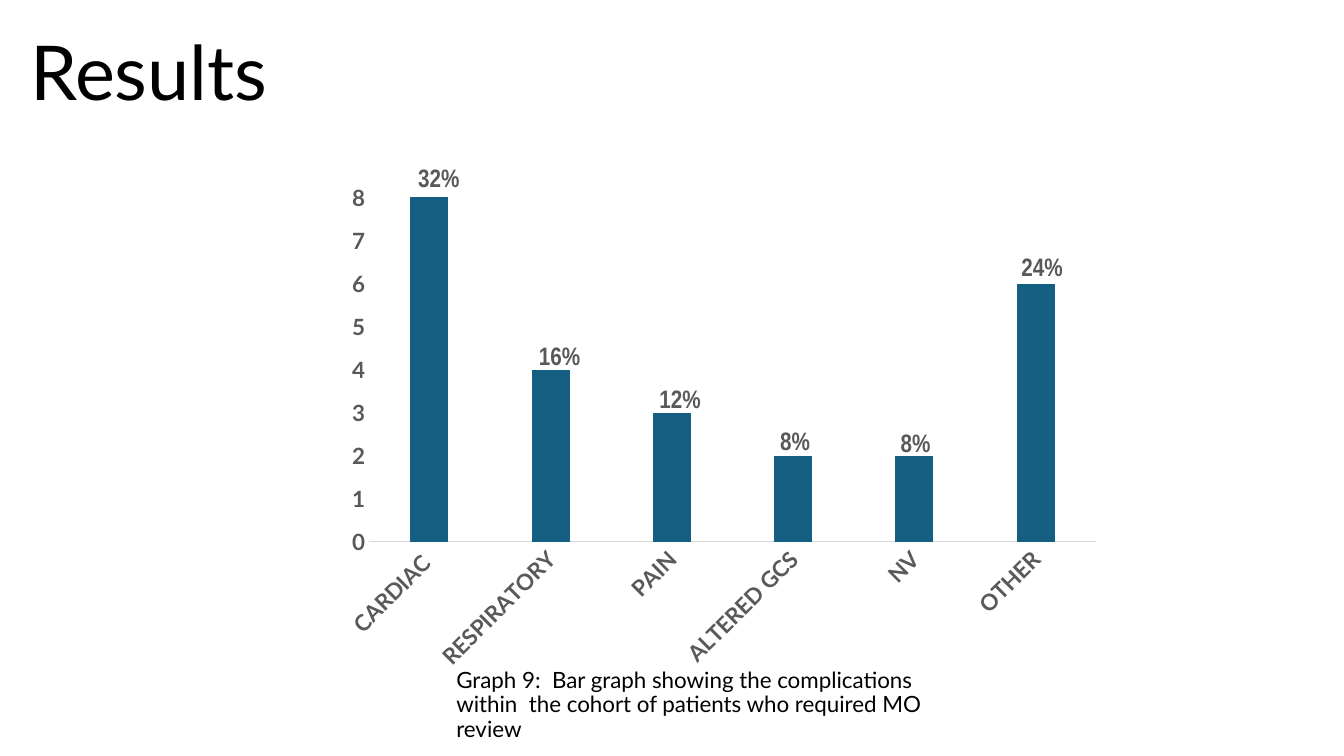
from pptx import Presentation
from pptx import util as u
from pptx.chart import data as cd
from pptx.dml.color import RGBColor
from pptx.enum import chart as ch, text
from pptx.oxml.ns import qn


def rgb(value):
    return RGBColor.from_string(value)


def style_font(font, size, color, name, bold=False):
    font.size = u.Pt(size)
    font.color.rgb = rgb(color)
    font.name = name
    font.bold = bold


class Slide:
    """Holds the slide style and adds its elements."""

    FONT = "Lato"
    LABEL_FONT = "Arial Narrow"
    INK = "000000"
    GREY = "595959"
    RULE = "D9D9D9"
    BAR = "156082"

    def __init__(self, prs):
        self.s = prs.slides.add_slide(prs.slide_layouts[6])

    def add_text(self, content, left, top, width, height, size=16, color=INK,
                 font=FONT, bold=False, anchor=text.MSO_ANCHOR.BOTTOM,
                 spacing=0.9, grow=False):
        sp = self.s.shapes.add_textbox(*map(u.Cm, (left, top, width, height)))
        tf = sp.text_frame
        tf.word_wrap = True
        tf.vertical_anchor = anchor
        if grow:
            tf.auto_size = text.MSO_AUTO_SIZE.SHAPE_TO_FIT_TEXT
        p = tf.paragraphs[0]
        p.line_spacing = spacing
        r = p.add_run()
        r.text = content
        style_font(r.font, size, color, font, bold)

    def add_bar_label(self, content, left, top):
        self.add_text(content, left, top, 1.85, 1.07, size=18, color=self.GREY,
                      font=self.LABEL_FONT, bold=True,
                      anchor=text.MSO_ANCHOR.TOP, spacing=1.0, grow=True)

    def add_columns(self, cats, vals, left, top, width, height):
        data = cd.CategoryChartData()
        data.categories = cats
        data.add_series("Series 1", vals)
        chart = self.s.shapes.add_chart(
            ch.XL_CHART_TYPE.COLUMN_CLUSTERED,
            *map(u.Cm, (left, top, width, height)), data).chart
        chart.has_legend = False
        chart.has_title = False
        style_font(chart.font, 10, self.INK, self.FONT)
        bars = chart.plots[0]
        bars.vary_by_categories = False
        bars.gap_width = 219
        bars.overlap = -27
        fill = bars.series[0].format.fill
        fill.solid()
        fill.fore_color.rgb = rgb(self.BAR)
        cat_axis, val_axis = chart.category_axis, chart.value_axis
        for axis in (cat_axis, val_axis):
            axis.has_major_gridlines = False
            axis.major_tick_mark = ch.XL_TICK_MARK.NONE
            axis.minor_tick_mark = ch.XL_TICK_MARK.NONE
            style_font(axis.tick_labels.font, 16, self.GREY, self.FONT, True)
        line = cat_axis.format.line
        line.color.rgb = rgb(self.RULE)
        line.width = u.Pt(0.75)
        body = cat_axis._element.find(qn("c:txPr")).find(qn("a:bodyPr"))
        body.set("rot", "-2700000")
        val_axis.format.line.fill.background()
        val_axis.minimum_scale = 0
        val_axis.maximum_scale = 8
        val_axis.major_unit = 1


def main():
    prs = Presentation()
    prs.slide_width, prs.slide_height = u.Cm(33.87), u.Cm(19.05)
    slide = Slide(prs)
    slide.add_text("Results", 0.51, -0.23, 25.65, 3.3, size=54)
    slide.add_text("Graph 9:  Bar graph showing the complications within  the "
                   "cohort of patients who required MO review",
                   11.25, 17.4, 13.21, 1.42)
    slide.add_columns(
        ["CARDIAC ", "RESPIRATORY", "PAIN", "ALTERED GCS", "NV", "OTHER"],
        [8, 4, 3, 2, 2, 6], 8.36, 4.39, 19.66, 12.73)
    shares = [("32%", 3.96), ("16%", 8.46), ("12%", 9.53),
              ("8%", 10.59), ("8%", 10.64), ("24%", 6.2)]
    for i, (share, top) in enumerate(shares):
        slide.add_bar_label(share, 10.29 + 3.04 * i, top)
    prs.save("out.pptx")


if __name__ == "__main__":
    main()
